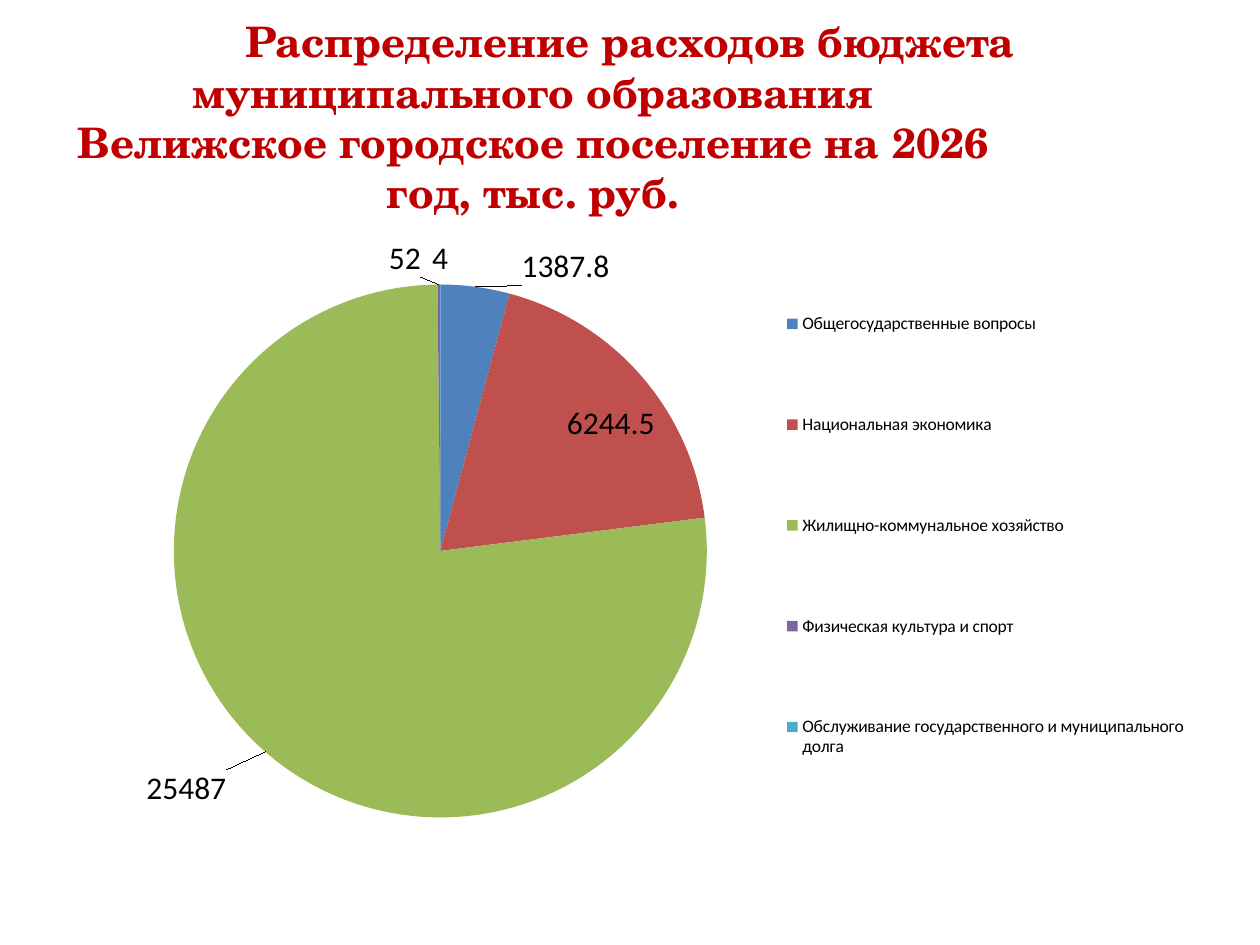
import pptx
import pptx.chart.data
import pptx.dml.color
import pptx.enum.chart
import pptx.enum.text
import pptx.oxml
import pptx.oxml.ns
import pptx.util

WIDTH = pptx.util.Inches(10)
HEIGHT = pptx.util.Inches(7.5)
TITLE_BOX = (0.05, 0.04, 0.9, 1 / 6)
CHART_BOX = (0.05, 7 / 30, 0.9, 0.66)

TITLE_RED = pptx.dml.color.RGBColor(0xC0, 0x00, 0x00)
BLACK = pptx.dml.color.RGBColor(0x00, 0x00, 0x00)
BLUE = pptx.dml.color.RGBColor(0x4F, 0x81, 0xBD)
RED = pptx.dml.color.RGBColor(0xC0, 0x50, 0x4D)
GREEN = pptx.dml.color.RGBColor(0x9B, 0xBB, 0x59)
PURPLE = pptx.dml.color.RGBColor(0x80, 0x64, 0xA2)
TEAL = pptx.dml.color.RGBColor(0x4B, 0xAC, 0xC6)

# Title line and its right indent in inches
TITLE_LINES = [
    ("Распределение расходов бюджета", 0),
    ("муниципального образования", 1.54),
    ("Велижское городское поселение на 2026 год, тыс. руб.", 0),
]

# Category, value, slice colour, shift of the label as shares of the chart
EXPENSES = [
    ("Общегосударственные вопросы", 1387.8, BLUE, (0.04, 0.01)),
    ("Национальная экономика", 6244.5, RED, None),
    ("Жилищно-коммунальное хозяйство", 25487, GREEN, (-0.03, 0.02)),
    ("Физическая культура и спорт", 52, PURPLE, (-0.03, 0)),
    ("Обслуживание государственного и муниципального долга", 4, TEAL, (0, 0)),
]


def to_lengths(box):
    """Turn shares of the slide into left, top, width and height."""
    left, top, width, height = box
    return (int(left * WIDTH), int(top * HEIGHT),
            int(width * WIDTH), int(height * HEIGHT))


def set_layout(parent, index, **settings):
    """Give a chart part a manual layout as its child number index."""
    for old in parent.findall(pptx.oxml.ns.qn("c:layout")):
        parent.remove(old)
    items = "".join(f'<c:{name} val="{value}"/>' for name, value in settings.items())
    parent.insert(index, pptx.oxml.parse_xml(
        f'<c:layout {pptx.oxml.ns.nsdecls("c")}>'
        f'<c:manualLayout>{items}</c:manualLayout></c:layout>'))


def add_title(page, box):
    title = page.shapes.title
    title.left, title.top, title.width, title.height = to_lengths(box)
    frame = title.text_frame
    frame.text = "\n".join(line for line, _ in TITLE_LINES)
    frame.word_wrap = True
    frame.vertical_anchor = pptx.enum.text.MSO_ANCHOR.MIDDLE
    for para, (_, indent) in zip(frame.paragraphs, TITLE_LINES):
        para.alignment = pptx.enum.text.PP_ALIGN.CENTER
        para.font.name = "TeX Gyre Schola"
        para.font.size = pptx.util.Pt(24)
        para.font.bold = True
        para.font.color.rgb = TITLE_RED
        if indent:
            para._p.get_or_add_pPr().set("marR", str(pptx.util.Inches(indent)))


def style_slices(series):
    labels = series.data_labels
    labels.show_value = True
    labels.position = pptx.enum.chart.XL_LABEL_POSITION.BEST_FIT
    for index, (_, _, colour, shift) in enumerate(EXPENSES):
        point = series.points[index]
        point.format.fill.solid()
        point.format.fill.fore_color.rgb = colour
        if shift:
            point.data_label.position = pptx.enum.chart.XL_LABEL_POSITION.OUTSIDE_END
    for expense_label in series._element.iter(pptx.oxml.ns.qn("c:dLbl")):
        shift = EXPENSES[expense_label.idx_val][3]
        set_layout(expense_label, 1, x=shift[0], y=shift[1])


def add_expense_pie(page, box):
    data = pptx.chart.data.CategoryChartData()
    data.categories = [expense[0] for expense in EXPENSES]
    data.add_series("Series 1", [expense[1] for expense in EXPENSES])
    chart = page.shapes.add_chart(
        pptx.enum.chart.XL_CHART_TYPE.PIE, *to_lengths(box), data).chart
    chart.has_title = False
    chart.font.name = "Calibri"
    chart.font.size = pptx.util.Pt(18)
    chart.font.color.rgb = BLACK
    chart.plots[0].vary_by_categories = True
    style_slices(chart.plots[0].series[0])

    chart.has_legend = True
    legend = chart.legend
    legend.position = pptx.enum.chart.XL_LEGEND_POSITION.RIGHT
    legend.include_in_layout = False
    legend.font.size = pptx.util.Pt(10)
    set_layout(legend._element, 1, xMode="edge", yMode="edge",
               x=19 / 30, y=0.02, w=0.36, h=0.97)
    plot_area = chart._chartSpace.find(".//" + pptx.oxml.ns.qn("c:plotArea"))
    set_layout(plot_area, 0, layoutTarget="inner", xMode="edge", yMode="edge",
               x=0.88 / 9, y=0.1, w=0.47, h=0.86)


def main():
    deck = pptx.Presentation()
    deck.slide_width, deck.slide_height = WIDTH, HEIGHT
    page = deck.slides.add_slide(deck.slide_layouts.get_by_name("Title Only"))
    add_title(page, TITLE_BOX)
    add_expense_pie(page, CHART_BOX)
    deck.save("out.pptx")


if __name__ == "__main__":
    main()
